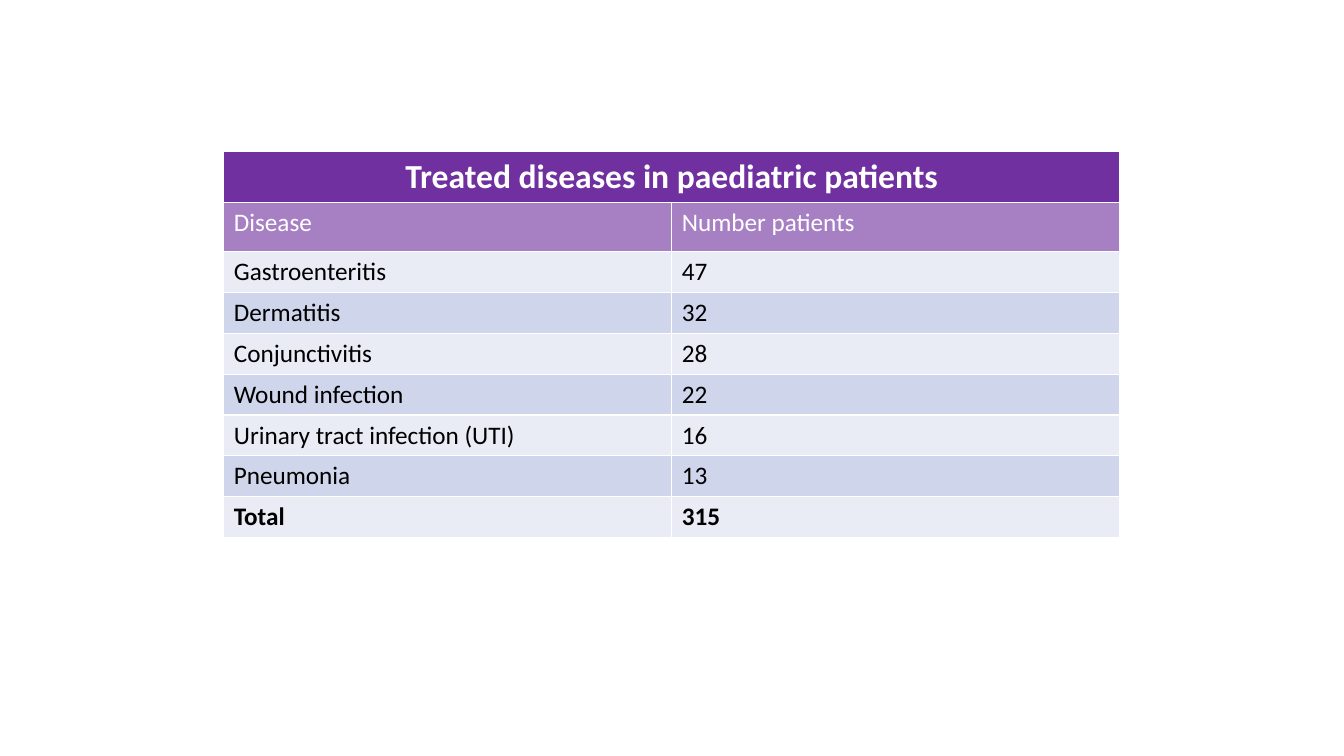
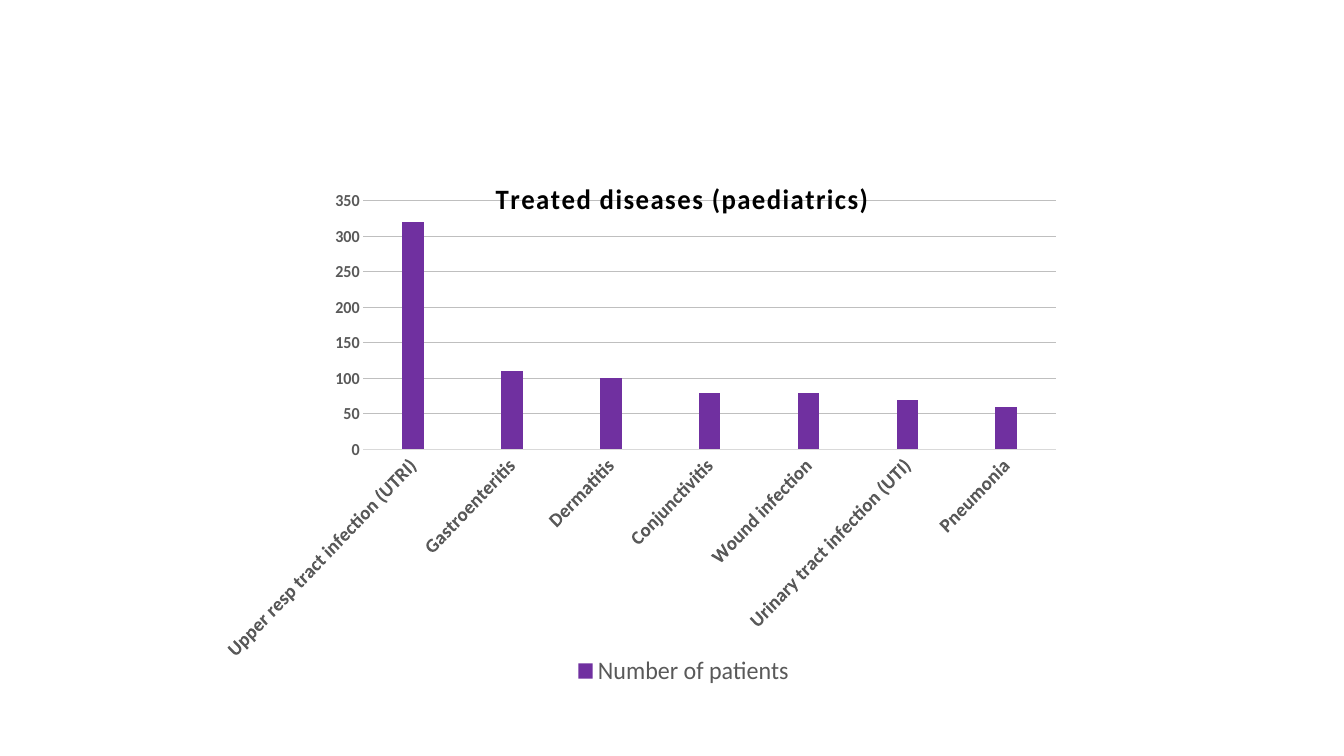
from lxml.etree import SubElement, fromstring
from pptx import Presentation
from pptx.chart.data import CategoryChartData as ChartData
from pptx.dml.color import RGBColor as Rgb
from pptx.enum.chart import XL_CHART_TYPE as ChartType
from pptx.enum.chart import XL_LEGEND_POSITION as LegendPosition
from pptx.enum.chart import XL_TICK_MARK as TickMark
from pptx.enum.text import PP_ALIGN as Align
from pptx.oxml.ns import nsdecls, qn
from pptx.util import Cm, Pt

COLOURS = {
    "purple": "7030A0",
    "white": "FFFFFF",
    "black": "000000",
    "grey": "595959",
    "axis": "D9D9D9",
    "grid": "BFBFBF",
    "band_light": "E9EBF5",
    "band_dark": "CFD5EA",
}
BANDS = ("band_light", "band_dark")

TABLE_TITLE = "Treated diseases in paediatric patients"
TABLE_HEADS = ("Disease", "Number patients")
TABLE_ROWS = (
    ("Gastroenteritis", "47"),
    ("Dermatitis", "32"),
    ("Conjunctivitis", "28"),
    ("Wound infection", "22"),
    ("Urinary tract infection (UTI)", "16"),
    ("Pneumonia", "13"),
    ("Total", "315"),
)

CHART_TITLE = "Treated diseases (paediatrics)"
SERIES_NAME = "Number of patients"
PATIENTS = {
    "Upper resp tract infection (UTRI)": 320,
    "Gastroenteritis": 110,
    "Dermatitis": 100,
    "Conjunctivitis": 80,
    "Wound infection": 80,
    "Urinary tract infection (UTI)": 70,
    "Pneumonia": 60,
}


class DiseaseDeck:
    font_name = "Calibri"

    def __init__(self):
        self.deck = Presentation()
        self.deck.slide_width = Cm(33.87)
        self.deck.slide_height = Cm(19.05)
        self.page = None

    def add_page(self):
        self.page = self.deck.slides.add_slide(self.deck.slide_layouts[6])

    def colour(self, name):
        return Rgb.from_string(COLOURS[name])

    def style_font(self, font, size, colour, bold=False):
        values = {"name": self.font_name, "size": Pt(size), "bold": bold}
        for name, value in values.items():
            setattr(font, name, value)
        font.color.rgb = self.colour(colour)

    def style_line(self, line, colour):
        line.color.rgb = self.colour(colour)
        line.width = Pt(0.75)

    def fill_cell(self, cell, text, fill, size=18, colour="black",
                  bold=False, opacity=100, align=Align.LEFT):
        cell.fill.solid()
        cell.fill.fore_color.rgb = self.colour(fill)
        if opacity < 100:
            tint = next(cell._tc.iter(qn("a:srgbClr")))
            SubElement(tint, qn("a:alpha")).set("val", str(opacity * 1000))
        para = cell.text_frame.paragraphs[0]
        para.alignment = align
        span = para.add_run()
        span.text = text
        self.style_font(span.font, size, colour, bold)

    def add_table(self, title, heads, rows):
        heights = [Cm(1.24)] * 2 + [Cm(1.03)] * len(rows)
        table = self.page.shapes.add_table(
            len(heights), len(heads), Cm(5.64), Cm(3.81), Cm(22.58), sum(heights)
        ).table
        for row, height in zip(table.rows, heights):
            row.height = height
        table.cell(0, 0).merge(table.cell(0, len(heads) - 1))
        self.fill_cell(table.cell(0, 0), title, "purple", 24, "white", True,
                       align=Align.CENTER)
        for column, head in enumerate(heads):
            self.fill_cell(table.cell(1, column), head, "purple",
                           colour="white", opacity=61)
        for index, row in enumerate(rows):
            for column, text in enumerate(row):
                self.fill_cell(table.cell(index + 2, column), text,
                               BANDS[index % 2], bold=row is rows[-1])

    def place_part(self, part, **place):
        old = part.find(qn("c:layout"))
        if old is not None:
            part.remove(old)
        modes = {"xMode": "edge", "yMode": "edge"}
        values = {**modes, **place}
        if "w" in place:
            values = {"layoutTarget": "inner", **values}
        items = "".join(f'<c:{name} val="{value}"/>' for name, value in values.items())
        layout = fromstring(
            f'<c:layout {nsdecls("c")}><c:manualLayout>{items}</c:manualLayout></c:layout>'
        )
        anchor = part.find(qn("c:overlay"))
        if anchor is None:
            anchor = part[0]
        anchor.addprevious(layout)

    def add_chart(self, title, series_name, numbers):
        data = ChartData()
        data.categories = list(numbers)
        data.add_series(series_name, list(numbers.values()))
        chart = self.page.shapes.add_chart(
            ChartType.COLUMN_CLUSTERED, Cm(5.61), Cm(3.84), Cm(21.01), Cm(13.61), data
        ).chart
        self.style_font(chart.font, 10, "black")
        self.style_columns(chart.plots[0])
        self.style_axes(chart)
        self.title_chart(chart, title)
        self.add_legend(chart)
        plot_area = next(chart._chartSpace.iter(qn("c:plotArea")))
        self.place_part(plot_area, x=0.13, y=0.09, w=0.87, h=0.46)

    def style_columns(self, plot):
        values = {"gap_width": 355, "overlap": -70, "vary_by_categories": False}
        for name, value in values.items():
            setattr(plot, name, value)
        fill = plot.series[0].format.fill
        fill.solid()
        fill.fore_color.rgb = self.colour("purple")

    def style_axes(self, chart):
        for axis, size in ((chart.category_axis, 14), (chart.value_axis, 12)):
            axis.major_tick_mark = TickMark.NONE
            axis.minor_tick_mark = TickMark.NONE
            self.style_font(axis.tick_labels.font, size, "grey", True)
        names = chart.category_axis
        self.style_line(names.format.line, "axis")
        next(names._element.iter(qn("a:bodyPr"))).set("rot", "-2700000")
        scale = chart.value_axis
        values = {"minimum_scale": 0, "maximum_scale": 350, "major_unit": 50}
        for name, value in values.items():
            setattr(scale, name, value)
        scale.format.line.fill.background()
        self.style_line(scale.major_gridlines.format.line, "grid")

    def title_chart(self, chart, title):
        chart.has_title = True
        span = chart.chart_title.text_frame.paragraphs[0].add_run()
        span.text = title
        self.style_font(span.font, 20, "black", True)
        span._r.get_or_add_rPr().set("spc", "100")
        self.place_part(chart.chart_title._element, x=0.29, y=0.04)

    def add_legend(self, chart):
        chart.has_legend = True
        legend = chart.legend
        legend.position = LegendPosition.BOTTOM
        legend.include_in_layout = False
        self.style_font(legend.font, 18, "grey")
        self.place_part(legend._element, x=0.39, y=0.93)

    def save(self):
        self.deck.save("out.pptx")


def main():
    diseases = DiseaseDeck()
    diseases.add_page()
    diseases.add_table(TABLE_TITLE, TABLE_HEADS, TABLE_ROWS)
    diseases.add_page()
    diseases.add_chart(CHART_TITLE, SERIES_NAME, PATIENTS)
    diseases.save()


if __name__ == "__main__":
    main()
